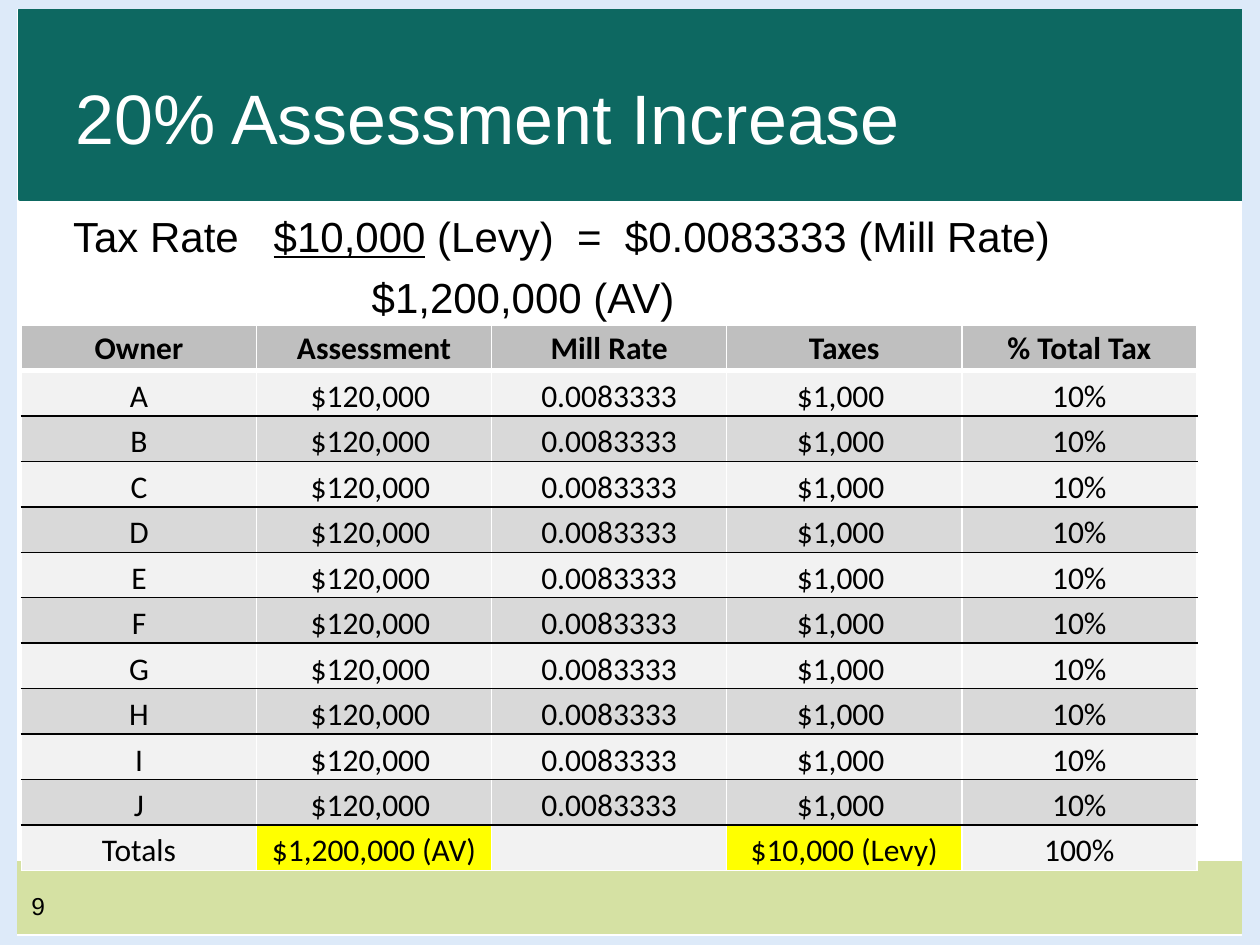
from dataclasses import dataclass

from lxml.etree import SubElement
from pptx import Presentation
from pptx.dml.color import RGBColor
from pptx.enum.shapes import MSO_SHAPE
from pptx.enum.text import MSO_ANCHOR, MSO_AUTO_SIZE, PP_ALIGN
from pptx.oxml.ns import qn
from pptx.util import Inches, Pt


@dataclass(frozen=True)
class Theme:
    teal: str = "0D6861"
    lime: str = "D5E1A3"
    frame: str = "DDEAF9"
    black: str = "000000"
    white: str = "FFFFFF"
    header: str = "BFBFBF"
    light: str = "F2F2F2"
    dark: str = "D9D9D9"
    highlight: str = "FFFF00"
    text_font: str = "Arial"
    table_font: str = "Calibri"
    title_size: int = 40
    body_size: int = 24
    table_size: int = 18
    number_size: int = 14


def write(paragraph, text, *, font, size, color, bold=False, underline=False,
          align=PP_ALIGN.LEFT):
    """Add one formatted run to a paragraph and return it."""
    paragraph.alignment = align
    run = paragraph.add_run()
    run.text = text
    run.font.name = font
    run.font.size = Pt(size)
    run.font.bold = bold
    run.font.underline = underline
    run.font.color.rgb = RGBColor.from_string(color)
    return run


def add_text_shadow(run):
    effects = SubElement(run.font._element, qn("a:effectLst"))
    shadow = SubElement(effects, qn("a:outerShdw"), blurRad="38100",
                        dist="38100", dir="2700000", algn="tl")
    color = SubElement(shadow, qn("a:srgbClr"), val="000000")
    SubElement(color, qn("a:alpha"), val="43000")
    # Effects come right after the fill in a run's properties
    run.font._element.find(qn("a:solidFill")).addnext(effects)


def set_borders(cell, top, bottom, side):
    """Draw the four cell borders; each is a (colour, points) pair."""
    properties = cell._tc.get_or_add_tcPr()
    edges = {"a:lnL": side, "a:lnR": side, "a:lnT": top, "a:lnB": bottom}
    for position, (tag, (color, width)) in enumerate(edges.items()):
        line = SubElement(properties, qn(tag), w=str(Pt(width)))
        fill = SubElement(line, qn("a:solidFill"))
        SubElement(fill, qn("a:srgbClr"), val=color)
        properties.insert(position, line)


class SlideBuilder:
    def __init__(self, slide, theme):
        self.slide = slide
        self.theme = theme

    def place(self, placeholder, left, top, width, height):
        """Move a placeholder and bring it in front of the bands."""
        placeholder.left, placeholder.top = Inches(left), Inches(top)
        placeholder.width, placeholder.height = Inches(width), Inches(height)
        self.slide.shapes._spTree.append(placeholder._element)
        frame = placeholder.text_frame
        frame.word_wrap = True
        frame.auto_size = MSO_AUTO_SIZE.NONE
        return frame

    def band(self, left, top, width, height, color):
        band = self.slide.shapes.add_shape(
            MSO_SHAPE.RECTANGLE, Inches(left), Inches(top), Inches(width), Inches(height))
        band.shadow.inherit = False
        band.fill.solid()
        band.fill.fore_color.rgb = RGBColor.from_string(color)
        band.line.color.rgb = RGBColor.from_string(color)
        band.line.width = Pt(2)

    def page_number(self, text, left, top, width, height):
        number = self.slide.shapes.add_textbox(
            Inches(left), Inches(top), Inches(width), Inches(height))
        number.text_frame.word_wrap = True
        write(number.text_frame.paragraphs[0], text, font=self.theme.text_font,
              size=self.theme.number_size, color=self.theme.black)

    def title(self, text, *place):
        frame = self.place(self.slide.shapes.title, *place)
        frame.vertical_anchor = MSO_ANCHOR.MIDDLE
        heading = write(frame.paragraphs[0], text, font=self.theme.text_font,
                        size=self.theme.title_size, color=self.theme.white)
        add_text_shadow(heading)

    def formula(self, numerator, denominator, *place):
        """Write the fraction: (text, underlined) parts over a denominator."""
        frame = self.place(self.slide.placeholders[1], *place)
        frame.vertical_anchor = MSO_ANCHOR.TOP
        frame.margin_top = Inches(0.09)
        lines = [(numerator, 0, 0), ([(denominator, False)], 2.37, 6)]
        for parts, indent, space in lines:
            paragraph = frame.paragraphs[0] if space == 0 else frame.add_paragraph()
            properties = paragraph._p.get_or_add_pPr()
            properties.set("marL", str(Inches(indent)))
            properties.set("indent", "0")
            SubElement(properties, qn("a:buNone"))
            tabs = SubElement(properties, qn("a:tabLst"))
            SubElement(tabs, qn("a:tab"), pos=str(Inches(1.38)), algn="l")
            paragraph.space_before = Pt(space)
            for text, underline in parts:
                write(paragraph, text, font=self.theme.text_font, underline=underline,
                      size=self.theme.body_size, color=self.theme.black)

    def tax_table(self, rows, highlights, left, top, width, height):
        theme = self.theme
        last = len(rows) - 1
        table = self.slide.shapes.add_table(
            len(rows), len(rows[0]), Inches(left), Inches(top),
            Inches(width), Inches(height)).table
        table.horz_banding = False
        thin_white, thick_white = (theme.white, 1), (theme.white, 3)
        thin_black = (theme.black, 1)
        # Rule below each row; the rule above a row is the one before it
        rules = [thin_white, thick_white] + [thin_black] * (last - 1) + [thin_white]
        for r, row in enumerate(rows):
            for c, text in enumerate(row):
                cell = table.cell(r, c)
                cell.margin_left = cell.margin_right = cell.margin_top = Inches(0.01)
                cell.margin_bottom = 0
                cell.vertical_anchor = MSO_ANCHOR.BOTTOM if r else MSO_ANCHOR.MIDDLE
                fill = theme.light if r % 2 else theme.dark
                if r == 0:
                    fill = theme.header
                elif (r, c) in highlights:
                    fill = theme.highlight
                cell.fill.solid()
                cell.fill.fore_color.rgb = RGBColor.from_string(fill)
                set_borders(cell, rules[r], rules[r + 1], thin_white)
                if text:
                    write(cell.text_frame.paragraphs[0], text, font=theme.table_font,
                          size=theme.table_size, color=theme.black, bold=r == 0,
                          align=PP_ALIGN.CENTER)


def main():
    deck = Presentation()
    deck.slide_width, deck.slide_height = Inches(10), Inches(7.5)
    theme = Theme()
    builder = SlideBuilder(deck.slides.add_slide(deck.slide_layouts[1]), theme)

    # Footer and title bands, then the frame round the slide
    builder.band(0.12, 6.85, 9.73, 0.55, theme.lime)
    builder.band(0.16, 0.08, 9.7, 1.5, theme.teal)
    builder.band(0, 0, 10, 0.06, theme.frame)
    builder.band(0, 0.06, 0.12, 7.41, theme.frame)
    builder.band(9.87, 0.03, 0.12, 7.41, theme.frame)
    builder.band(0, 7.44, 10, 0.06, theme.frame)
    builder.page_number("9", 0.15, 7.02, 2.33, 0.4)

    # Tax rate formula and title
    numerator = [("Tax Rate\t ", False), ("$10,000", True),
                 (" (Levy)  =  $0.0083333 (Mill Rate)", False)]
    builder.formula(numerator, "$1,200,000 (AV)", 0.48, 1.58, 9, 5.35)
    builder.title("20% Assessment Increase", 0.5, 0.3, 7.42, 1.25)

    # Tax by owner, with the totals that the formula uses highlighted
    header = ["Owner", "Assessment", "Mill Rate", "Taxes", "% Total Tax"]
    owners = [[owner, "$120,000 ", "0.0083333", "$1,000 ", "10%"]
              for owner in "ABCDEFGHIJ"]
    totals = ["Totals", "$1,200,000 (AV)", "", "$10,000 (Levy)", "100%"]
    rows = [header, *owners, totals]
    total_row = len(rows) - 1
    builder.tax_table(rows, {(total_row, 1), (total_row, 3)}, 0.17, 2.58, 9.33, 4.33)

    deck.save("out.pptx")


if __name__ == "__main__":
    main()
